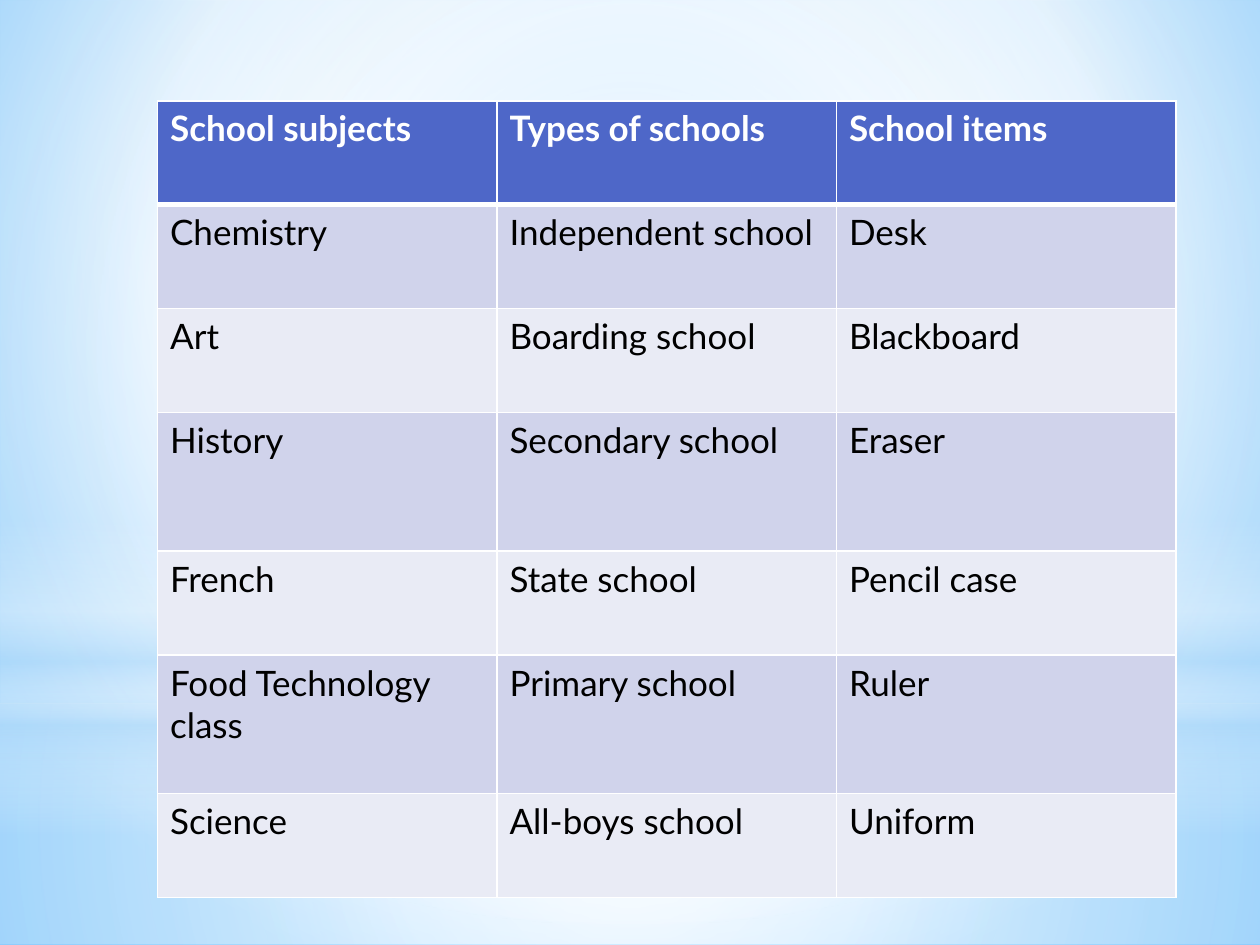
import pptx
import pptx.util
import pptx.dml.color
import pptx.enum.shapes
import pptx.oxml.ns
import lxml.etree

HUES = {
    "white": "FFFFFF", "black": "000000", "head": "4E67C8",
    "band": "D0D3EB", "pale": "E9EBF5", "mist": "B4DCFA",
    "sky": "9ED5FF", "deep": "5BB9FF",
}
SHAPE = pptx.enum.shapes.MSO_SHAPE
MID = (50, 50, 50, 50)


def add(node, tag, **attrs):
    name = pptx.oxml.ns.qn("a:" + tag)
    return lxml.etree.SubElement(node, name, {k: str(v) for k, v in attrs.items()})


class Deck:
    font = "Lato"
    size = 20
    cols, rows = 120, 90

    def __init__(self):
        self.show = pptx.Presentation()
        self.show.slide_width = pptx.util.Inches(10)
        self.show.slide_height = pptx.util.Inches(7.5)
        self.slide = self.show.slides.add_slide(self.show.slide_layouts[6])

    def wide(self, n):
        return round(self.show.slide_width * n / self.cols)

    def high(self, n):
        return round(self.show.slide_height * n / self.rows)

    def box(self, x, y, w, h):
        return self.wide(x), self.high(y), self.wide(w), self.high(h)

    def color(self, name):
        return pptx.dml.color.RGBColor.from_string(HUES[name])

    def blend(self, fill, node, stops, focus=None, angle=90):
        fill.solid()
        old = node.find(pptx.oxml.ns.qn("a:solidFill"))
        grad = add(node, "gradFill", rotWithShape=1)
        node.replace(old, grad)
        row = add(grad, "gsLst")
        for pos, hue, alpha in stops:
            stop = add(row, "gs", pos=pos * 1000)
            tint = add(stop, "srgbClr", val=HUES[hue])
            if alpha < 100:
                add(tint, "alpha", val=alpha * 1000)
        if focus:
            way = add(grad, "path", path="circle")
            add(way, "fillToRect", **{k: v * 1000 for k, v in zip("ltrb", focus)})
        else:
            add(grad, "lin", ang=angle * 60000, scaled=0)

    def back(self, stops, focus):
        fill = self.slide.background.fill
        fill.solid()
        node = self.slide.element.find(".//" + pptx.oxml.ns.qn("p:bgPr"))
        self.blend(fill, node, stops, focus)

    def glow(self, kind, place, stops, focus=None):
        shape = self.slide.shapes.add_shape(kind, *self.box(*place))
        shape.shadow.inherit = False
        shape.line.fill.background()
        self.blend(shape.fill, shape.element.spPr, stops, focus)

    def edge(self, cell, **widths):
        node = cell._tc.get_or_add_tcPr()
        for side in "LRTB":
            line = add(node, "ln" + side, w=pptx.util.Pt(widths.get(side, 1)))
            add(add(line, "solidFill"), "srgbClr", val=HUES["white"])

    def cell(self, cell, text, row):
        cell.text_frame.text = text
        self.edge(cell, **{0: {"B": 3}, 1: {"T": 3}}.get(row, {}))
        cell.fill.solid()
        fill = "head" if row == 0 else "band" if row % 2 else "pale"
        cell.fill.fore_color.rgb = self.color(fill)
        font = cell.text_frame.paragraphs[0].runs[0].font
        font.name = self.font
        font.size = pptx.util.Pt(self.size)
        font.bold = row == 0
        font.color.rgb = self.color("black" if row else "white")

    def table(self, place, data, sizes):
        frame = self.slide.shapes.add_table(len(data), len(data[0]), *self.box(*place))
        grid = frame.table
        for col in grid.columns:
            col.width = self.wide(place[2] / len(data[0]))
        for r, (texts, size) in enumerate(zip(data, sizes)):
            grid.rows[r].height = self.high(size)
            for c, text in enumerate(texts):
                self.cell(grid.cell(r, c), text, r)


def main():
    deck = Deck()
    deck.back([(0, "sky", 100), (60, "white", 100), (100, "deep", 100)], (20, 10, 20, 60))
    deck.glow(SHAPE.RECTANGLE, (0, 67, 120, 23),
              [(0, "white", 91), (37, "white", 76), (100, "mist", 79)], MID)
    deck.glow(SHAPE.RECTANGLE, (0, 0, 120, 67),
              [(0, "white", 89), (48, "white", 62), (100, "mist", 79)], MID)
    deck.glow(SHAPE.RECTANGLE, (0, 49.5, 120, 30),
              [(0, "white", 0), (29, "white", 30), (45, "mist", 40),
               (55, "white", 26), (65, "mist", 60), (100, "white", 0)])
    deck.glow(SHAPE.OVAL, (0, 21, 120, 67), [(0, "white", 100), (56, "white", 0)], MID)

    data = [
        ("School subjects", "Types of schools", "School items"),
        ("Chemistry", "Independent school", "Desk"),
        ("Art", "Boarding school", "Blackboard"),
        ("History", "Secondary school", "Eraser"),
        ("French", "State school", "Pencil case"),
        ("Food Technology class", "Primary school", "Ruler"),
        ("Science", "All-boys school", "Uniform"),
    ]
    low, tall = 9.9, 13.2
    deck.table((15, 9.6, 97, 76), data, (low, low, low, tall, low, tall, low))
    deck.show.save("out.pptx")


if __name__ == "__main__":
    main()
